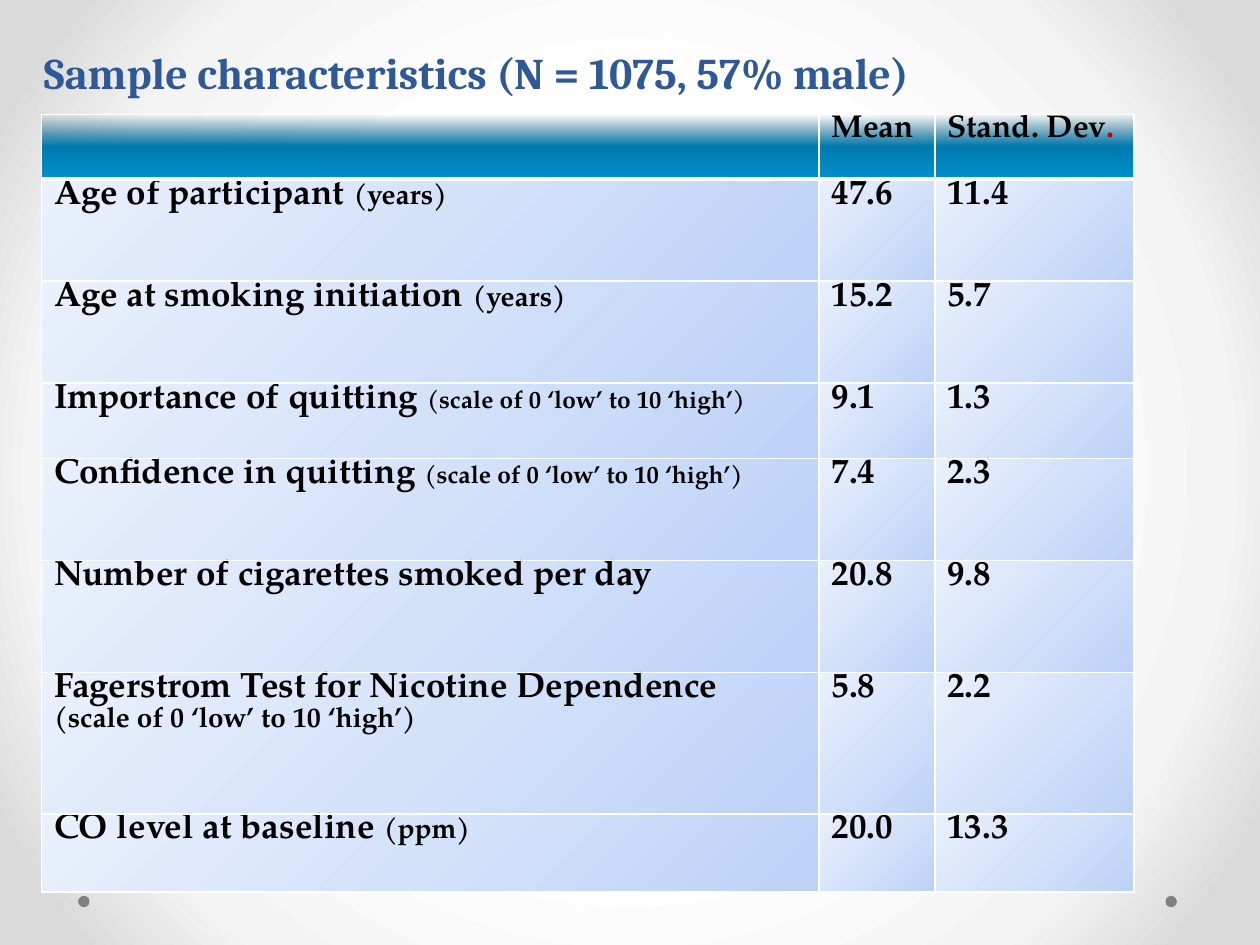
from pptx import Presentation, oxml
from pptx.dml.color import RGBColor
from pptx.enum import shapes, text
from pptx.util import Inches, Pt

BLUE = RGBColor(0x2F, 0x58, 0x97)
BLACK = RGBColor(0, 0, 0)
RED = RGBColor(0xC0, 0, 0)
GREY = RGBColor(0x80, 0x80, 0x80)
WHITE = RGBColor(0xFF, 0xFF, 0xFF)
BACK = [(50, WHITE), (76, RGBColor(0xF4, 0xF4, 0xF4)), (92, RGBColor(0xDA, 0xDA, 0xDA))]
HEAD = [(0, RGBColor(0, 0x55, 0x7B), 0), (50, RGBColor(0, 0x7A, 0xAF)), (100, RGBColor(0x01, 0x90, 0xCF))]
BODY = [(0, RGBColor(0xBC, 0xD2, 0xF7)), (50, RGBColor(0xD4, 0xE2, 0xF9)), (100, RGBColor(0xEA, 0xF0, 0xFC))]

NS = ('xmlns:a="http://schemas.openxmlformats.org/drawingml/2006/main" '
      'xmlns:p="http://schemas.openxmlformats.org/presentationml/2006/main"')
ROUND = '<a:path path="circle"><a:fillToRect l="50000" t="50000" r="50000" b="50000"/></a:path>'
SCALE = "(scale of 0 ‘low’ to 10 ‘high’)"
COLS = [6.17, 0.92, 1.58]
ROWS = [0.51, 0.81, 0.81, 0.6, 0.81, 0.89, 1.12, 0.62]
DATA = [
    ([[("Age of participant ", 20), ("(years)", 16)]], "47.6", "11.4"),
    ([[("Age at smoking initiation ", 20), ("(years)", 16)]], "15.2", "5.7"),
    ([[("Importance of quitting ", 20), (SCALE, 14)]], "9.1", "1.3"),
    ([[("Confidence in quitting ", 20), (SCALE, 14)]], "7.4", "2.3"),
    ([[("Number of cigarettes smoked per day", 20)]], "20.8", "9.8"),
    ([[("Fagerstrom Test for Nicotine Dependence", 20)], [(SCALE, 16)]], "5.8", "2.2"),
    ([[("CO level at baseline ", 20), ("(ppm)", 16)]], "20.0", "13.3"),
]


def grad(stops, way):
    marks = ""
    for pos, color, *alpha in stops:
        clear = f'<a:alpha val="{alpha[0]}"/>' if alpha else ""
        marks += f'<a:gs pos="{pos * 1000}"><a:srgbClr val="{color}">{clear}</a:srgbClr></a:gs>'
    return f'<a:gradFill {NS} rotWithShape="1"><a:gsLst>{marks}</a:gsLst>{way}</a:gradFill>'


def line(angle):
    return f'<a:lin ang="{angle * 60000}" scaled="0"/>'


def write(para, words, size, color, face):
    run = para.add_run()
    run.text = words
    look = {"size": Pt(size), "name": face, "bold": True}
    for key, value in look.items():
        setattr(run.font, key, value)
    run.font.color.rgb = color


def backdrop(slide):
    bg = f"<p:bg {NS}><p:bgPr>{grad(BACK, ROUND)}<a:effectLst/></p:bgPr></p:bg>"
    slide.element.cSld.insert(0, oxml.parse_xml(bg))


def dots(slide, lefts, top, size):
    for left in lefts:
        dot = slide.shapes.add_shape(shapes.MSO_SHAPE.OVAL, Inches(left), Inches(top), Inches(size), Inches(size))
        dot.shadow.inherit = False
        dot.fill.solid()
        dot.fill.fore_color.rgb = GREY
        dot.line.fill.background()


def title(slide, box):
    frame = slide.shapes.add_textbox(*map(Inches, box)).text_frame
    frame.word_wrap = True
    frame.vertical_anchor = text.MSO_ANCHOR.BOTTOM
    para = frame.paragraphs[0]
    para.line_spacing = Pt(58)
    write(para, "Sample characteristics (N = 1075, 57% male)", 25, BLUE, "Cambria")


def dress(cell, row):
    edges = {"L": 1, "R": 1, "T": 3 if row == 1 else 1, "B": 1 if row else 3}
    props = cell._tc.get_or_add_tcPr()
    for side, width in edges.items():
        props.append(oxml.parse_xml(
            f'<a:ln{side} {NS} w="{Pt(width)}"><a:solidFill><a:srgbClr val="{WHITE}"/></a:solidFill></a:ln{side}>'))
    fill = grad(BODY, line(225)) if row else grad(HEAD, line(90))
    props.append(oxml.parse_xml(fill))
    cell.margin_top = cell.margin_bottom = 0


def fill_in(cell, paras):
    frame = cell.text_frame
    for i, runs in enumerate(paras):
        para = frame.paragraphs[0] if i == 0 else frame.add_paragraph()
        for words, size, *color in runs:
            write(para, words, size, color[0] if color else BLACK, "TeX Gyre Pagella")


def grid(slide, box):
    table = slide.shapes.add_table(len(ROWS), len(COLS), *map(Inches, box)).table
    table.horz_banding = False
    for col, width in zip(table.columns, COLS):
        col.width = Inches(width)
    for row, height in zip(table.rows, ROWS):
        row.height = Inches(height)
    lines = [[[], [[("Mean", 18)]], [[("Stand. Dev", 18), (".", 18, RED)]]]]
    lines += [[label, [[(mean, 20)]], [[(dev, 20)]]] for label, mean, dev in DATA]
    for r, cells in enumerate(lines):
        for c, paras in enumerate(cells):
            dress(table.cell(r, c), r)
            fill_in(table.cell(r, c), paras)


def main():
    deck = Presentation()
    deck.slide_width, deck.slide_height = Inches(10), Inches(7.5)
    slide = deck.slides.add_slide(deck.slide_layouts[6])
    backdrop(slide)
    dots(slide, (9.25, 0.62), 7.11, 0.09)
    title(slide, (0.25, 0.16, 8.25, 0.67))
    grid(slide, (0.33, 0.91, 8.67, 6.17))
    deck.save("out.pptx")


if __name__ == "__main__":
    main()
